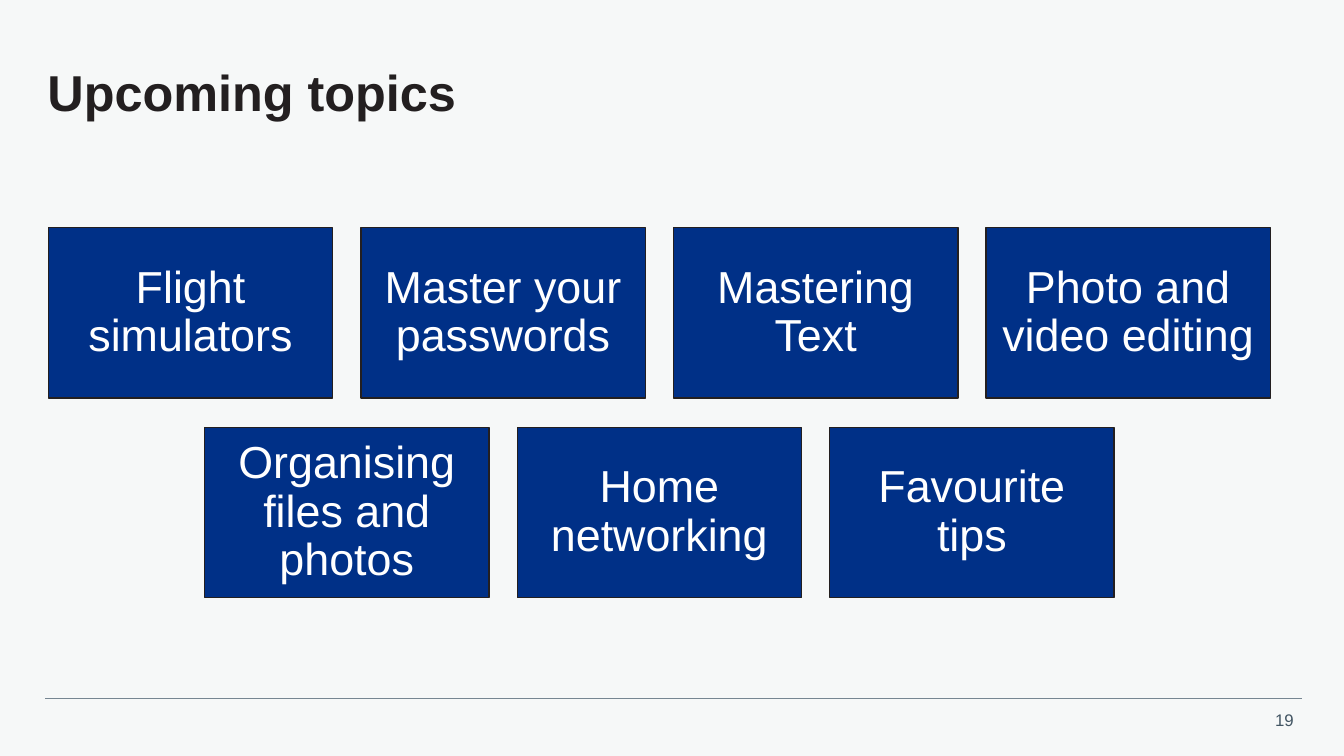
import pptx
import pptx.util
import pptx.dml.color
import pptx.enum.shapes
import pptx.enum.text
import pptx.oxml

Inches = pptx.util.Inches
Pt = pptx.util.Pt
Color = pptx.dml.color.RGBColor.from_string
Align = pptx.enum.text.PP_ALIGN
Anchor = pptx.enum.text.MSO_ANCHOR

theme = {
    "background": Color("F6F8F8"),
    "tile": Color("003087"),
    "ink": Color("231F20"),
    "light": Color("FFFFFF"),
    "rule": Color("768692"),
    "number": Color("425563"),
    "font": "Arial",
    "title_size": Pt(36),
    "tile_size": Pt(32),
    "number_size": Pt(12),
}


def assign(target, values):
    for name, value in values.items():
        setattr(target, name, value)


def write(box, text, size, color, align, inset, bold=False, wrap=True):
    frame = box.text_frame
    frame.text = text
    margins = dict.fromkeys(("margin_left", "margin_top", "margin_right", "margin_bottom"), Inches(inset))
    assign(frame, {
        "word_wrap": wrap,
        "auto_size": pptx.enum.text.MSO_AUTO_SIZE.NONE,
        "vertical_anchor": Anchor.MIDDLE,
        **margins,
    })
    para = frame.paragraphs[0]
    assign(para, {"alignment": align, "line_spacing": 0.9})
    span = para.runs[0]
    assign(span.font, {"name": theme["font"], "size": theme[size], "bold": bold})
    span.font.color.rgb = theme[color]


deck = pptx.Presentation()
assign(deck, {"slide_width": Inches(13.33), "slide_height": Inches(7.5)})
page = deck.slides.add_slide(deck.slide_layouts[5])
page.background.fill.solid()
page.background.fill.fore_color.rgb = theme["background"]

title = page.shapes.title
assign(title, {"left": Inches(0.47), "top": Inches(0.47), "width": Inches(12.47), "height": Inches(0.95)})
write(title, "Upcoming topics", "title_size", "ink", Align.LEFT, 0, bold=True)

topic_rows = [
    ["Flight simulators", "Master your passwords", "Mastering Text", "Photo and video editing"],
    ["Organising files and photos", "Home networking", "Favourite tips"],
]
grid_left, grid_top = 0.48, 2.26
tile_width, tile_height = 2.82, 1.69
column_step, row_step = 3.1, 1.98
most_columns = max(len(topics) for topics in topic_rows)

for row, topics in enumerate(topic_rows):
    indent = (most_columns - len(topics)) / 2
    for column, topic in enumerate(topics):
        tile = page.shapes.add_shape(
            pptx.enum.shapes.MSO_SHAPE.RECTANGLE,
            Inches(grid_left + (column + indent) * column_step),
            Inches(grid_top + row * row_step),
            Inches(tile_width),
            Inches(tile_height),
        )
        tile.shadow.inherit = False
        tile.fill.solid()
        tile.fill.fore_color.rgb = theme["tile"]
        tile.line.color.rgb = theme["ink"]
        tile.line.width = Pt(1)
        write(tile, topic, "tile_size", "light", Align.CENTER, 0.13)

rule = page.shapes.add_connector(
    pptx.enum.shapes.MSO_CONNECTOR.STRAIGHT,
    Inches(0.45), Inches(6.93), Inches(12.91), Inches(6.93),
)
rule.line.color.rgb = theme["rule"]
rule.line.width = Pt(0.5)
rule._element.spPr.append(pptx.oxml.parse_xml(
    '<a:effectLst xmlns:a="http://schemas.openxmlformats.org/drawingml/2006/main"/>'
))

number = page.shapes.add_textbox(Inches(12.52), Inches(7), Inches(0.41), Inches(0.3))
write(number, "19", "number_size", "number", Align.RIGHT, 0.1, wrap=False)

deck.save("out.pptx")
